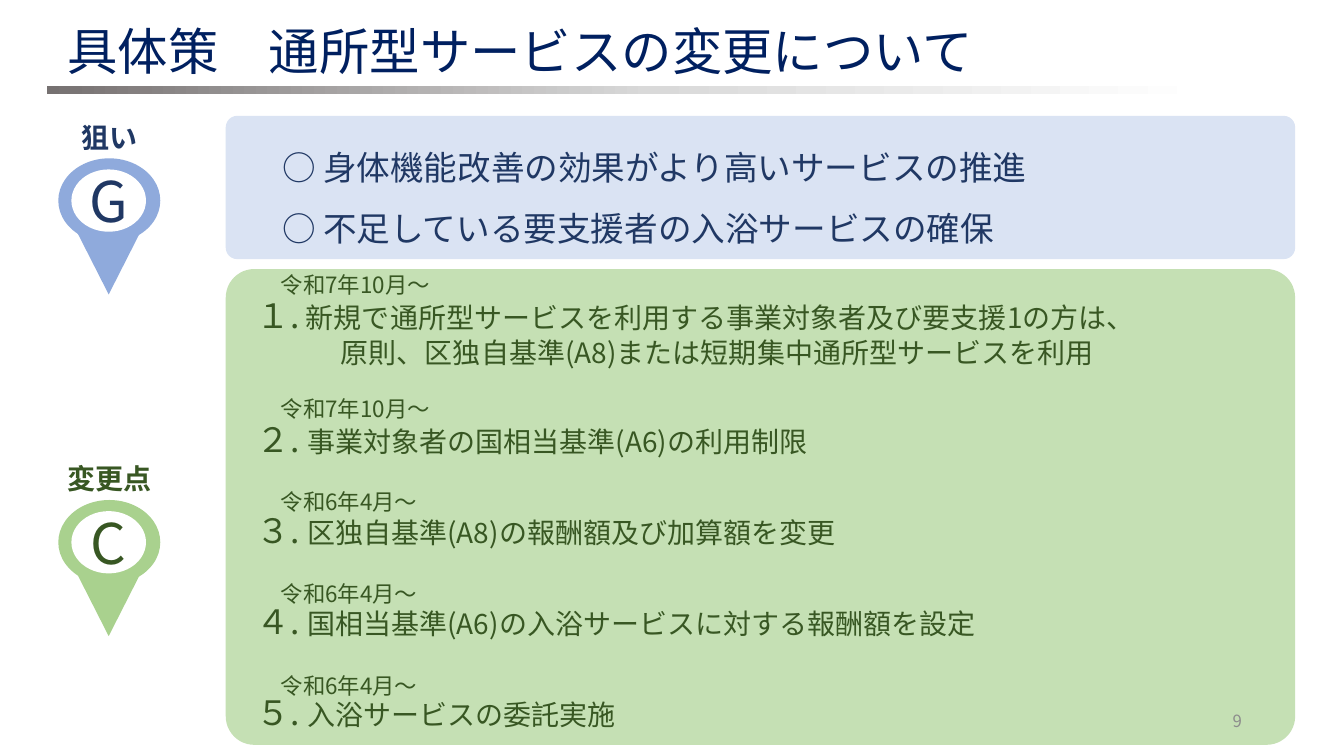
from lxml import etree
from pptx import Presentation
from pptx.dml.color import RGBColor
from pptx.enum.shapes import MSO_SHAPE
from pptx.enum.text import MSO_ANCHOR, PP_ALIGN
from pptx.oxml.ns import qn
from pptx.util import Cm, Pt

FONT = "Noto Sans CJK JP"
NAVY = RGBColor(0x00, 0x20, 0x60)
BLUE_TEXT = RGBColor(0x20, 0x38, 0x64)
BLUE = RGBColor(0x8F, 0xAA, 0xDC)
BLUE_PALE = RGBColor(0xDA, 0xE3, 0xF3)
GREEN_TEXT = RGBColor(0x38, 0x57, 0x23)
GREEN = RGBColor(0xA9, 0xD1, 0x8E)
GREEN_PALE = RGBColor(0xC5, 0xE0, 0xB4)
GREY = RGBColor(0x8C, 0x8C, 0x8C)
WHITE = RGBColor(0xFF, 0xFF, 0xFF)
BAR_STOPS = [(0, "767171"), (52, "D9D9D9"), (100, "FFFFFF")]

RECT = MSO_SHAPE.FLOWCHART_PROCESS
ROUND = MSO_SHAPE.ROUNDED_RECTANGLE
OVAL = MSO_SHAPE.OVAL
MERGE = MSO_SHAPE.FLOWCHART_MERGE
TOP, MIDDLE = MSO_ANCHOR.TOP, MSO_ANCHOR.MIDDLE
LEFT, CENTER, RIGHT = PP_ALIGN.LEFT, PP_ALIGN.CENTER, PP_ALIGN.RIGHT

AIMS = ["○ 身体機能改善の効果がより高いサービスの推進",
        "○ 不足している要支援者の入浴サービスの確保"]
# start date, its middle below the panel top (cm), number, lines
CHANGES = [
    ("令和7年10月～", 0.4, "１.",
     [" 新規で通所型サービスを利用する事業対象者及び要支援1の方は、",
      "原則、区独自基準(A8)または短期集中通所型サービスを利用"]),
    ("令和7年10月～", 3.52, "２. ", ["事業対象者の国相当基準(A6)の利用制限"]),
    ("令和6年4月～", 5.86, "３. ", ["区独自基準(A8)の報酬額及び加算額を変更"]),
    ("令和6年4月～", 8.17, "４. ", ["国相当基準(A6)の入浴サービスに対する報酬額を設定"]),
    ("令和6年4月～", 10.5, "５. ", ["入浴サービスの委託実施"]),
]


def add_run(p, text, size, color, bold=False):
    r = p.add_run()
    r.text = text
    r.font.size = Pt(size)
    r.font.name = FONT
    r.font.bold = bold
    r.font.color.rgb = color
    etree.SubElement(r._r.get_or_add_rPr(), qn("a:ea"), typeface=FONT)


def add_box(s, x, y, w, h, anchor=TOP):
    """Add an empty wrapping text box and return its text frame."""
    tf = s.shapes.add_textbox(Cm(x), Cm(y), Cm(w), Cm(h)).text_frame
    tf.word_wrap = True
    tf.vertical_anchor = anchor
    return tf


def add_line(s, x, y, w, h, text, size, color, align=LEFT, anchor=MIDDLE, bold=False):
    """Add a text box that holds a single paragraph."""
    p = add_box(s, x, y, w, h, anchor).paragraphs[0]
    p.alignment = align
    add_run(p, text, size, color, bold)


def add_filled(shapes, kind, x, y, w, h, color):
    sp = shapes.add_shape(kind, Cm(x), Cm(y), Cm(w), Cm(h))
    sp.shadow.inherit = False
    sp.fill.solid()
    sp.fill.fore_color.rgb = color
    sp.line.fill.background()
    return sp


def add_header(s, x, y, w):
    add_line(s, x + 0.26, y, w, 2.16, "具体策　通所型サービスの変更について", 36, NAVY)
    bar = add_filled(s.shapes, RECT, x, y + 1.98, 29.21, 0.2, WHITE)
    bar.fill.gradient()
    bar.fill.gradient_angle = 0
    stops = bar._element.spPr.find(".//" + qn("a:gsLst"))
    for gs in list(stops):
        stops.remove(gs)
    for percent, color in BAR_STOPS:
        gs = etree.SubElement(stops, qn("a:gs"), pos=str(percent * 1000))
        etree.SubElement(gs, qn("a:srgbClr"), val=color)


def add_pin(s, x, y, label, letter, color, text_color):
    """Add a map pin marked with a letter, under its label."""
    pin = s.shapes.add_group_shape().shapes
    add_filled(pin, OVAL, x + 0.81, y + 1.09, 2.57, 2.13, color)
    add_filled(pin, MERGE, x + 1.14, y + 2.67, 1.88, 1.85, color)
    face = add_filled(pin, OVAL, x + 1.14, y + 1.37, 1.88, 1.57, WHITE)
    tf = face.text_frame
    tf.margin_left = tf.margin_right = tf.margin_top = tf.margin_bottom = 0
    tf.vertical_anchor = MIDDLE
    p = tf.paragraphs[0]
    p.alignment = CENTER
    add_run(p, letter, 40, text_color)
    add_line(s, x, y, 4.19, 1.12, label, 20, text_color, CENTER, TOP, True)


def add_aims(s, x, y, w, h):
    panel = add_filled(s.shapes, ROUND, x, y, w, h, BLUE_PALE)
    panel.adjustments[0] = 0.08
    tf = add_box(s, x + 1.17, y + 0.15, w - 3.07, h - 0.31)
    for i, aim in enumerate(AIMS):
        p = tf.add_paragraph() if i else tf.paragraphs[0]
        p.line_spacing = 1.5
        add_run(p, aim, 24, BLUE_TEXT)


def add_changes(s, x, y, w, h):
    panel = add_filled(s.shapes, ROUND, x, y, w, h, GREEN_PALE)
    panel.adjustments[0] = 0.06
    tf = add_box(s, x + 0.53, y + 0.53, w - 1.17, h - 0.64)
    p = tf.paragraphs[0]
    for i, (date, middle, number, lines) in enumerate(CHANGES):
        if i:
            p.space_after = Pt(36)
            p = tf.add_paragraph()
        add_run(p, number, 24, GREEN_TEXT)
        add_run(p, lines[0], 20, GREEN_TEXT)
        for line in lines[1:]:
            p = tf.add_paragraph()
            p._p.get_or_add_pPr().set("marL", str(Cm(2.12)))
            add_run(p, line, 20, GREEN_TEXT)
        add_line(s, x + 1.14, y + middle - 0.65, 5.11, 1.3, date, 16, GREEN_TEXT)


def main():
    prs = Presentation()
    prs.slide_width, prs.slide_height = Cm(33.87), Cm(19.05)
    s = prs.slides.add_slide(prs.slide_layouts[6])
    add_header(s, 1.19, 0.2, 31.22)
    add_aims(s, 5.69, 2.92, 26.95, 3.61)
    add_changes(s, 5.69, 6.78, 26.95, 11.99)
    add_pin(s, 0.66, 2.9, "狙い", "G", BLUE, BLUE_TEXT)
    add_pin(s, 0.66, 11.51, "変更点", "C", GREEN, GREEN_TEXT)
    add_line(s, 23.93, 17.65, 7.62, 1.02, "9", 12, GREY, RIGHT)
    prs.save("out.pptx")


if __name__ == "__main__":
    main()
